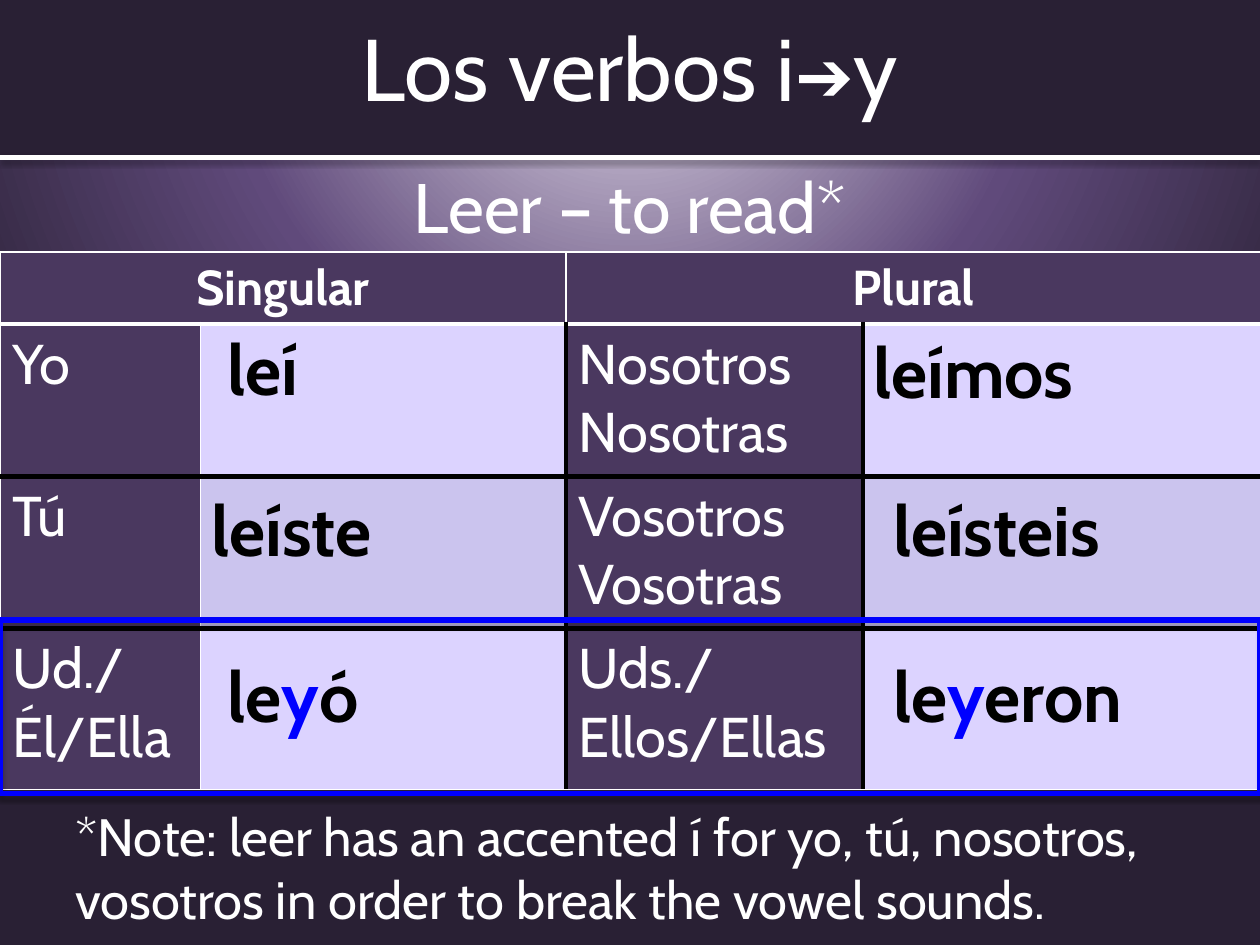
from dataclasses import dataclass
from pptx import Presentation
from pptx.dml.color import RGBColor as Rgb
from pptx.enum.shapes import MSO_CONNECTOR as Link, MSO_SHAPE as Geo
from pptx.enum.text import MSO_ANCHOR as Anchor, PP_ALIGN as Align
from pptx.oxml import parse_xml
from pptx.oxml.ns import nsdecls
from pptx.util import Cm, Pt

NS = nsdecls("a")
FONT = "Cabin"
WHITE, BLACK, BLUE = "FFFFFF", "000000", "0000FF"
DARK, PLUM, PALE, LILAC = "292034", "4A385F", "DCD3FF", "CBC4EE"
WIDE = 25.4


@dataclass
class Run:
    text: str
    color: str = ""
    size: int = 0
    font: str = ""


@dataclass
class Form:
    """A verb form laid over the grid."""
    left: float
    top: float
    width: float
    runs: list[Run]


@dataclass
class Person:
    """One row of the grid: pronouns and the shade of the form cells."""
    one: str
    many: str
    shade: str


FORMS = [
    Form(4.34, 6.48, 6.25, [Run("leí")]),
    Form(4.01, 9.73, 7.16, [Run("leíste")]),
    Form(4.34, 13.08, 6.86, [Run("le"), Run("y", BLUE), Run("ó")]),
    Form(17.35, 6.55, 8.53, [Run("leímos")]),
    Form(17.75, 9.73, 7.01, [Run("leísteis")]),
    Form(17.75, 13.08, 7.65, [Run("le"), Run("y", BLUE), Run("eron")]),
]
PEOPLE = [
    Person("Yo", "Nosotros\nNosotras", PALE),
    Person("Tú", "Vosotros\nVosotras", LILAC),
    Person("Ud./Él/Ella", "Uds./Ellos/Ellas", PALE),
]


def rgb(code: str) -> Rgb:
    return Rgb.from_string(code)


def style(para, size: int, color: str, bold: bool = False, align=Align.LEFT) -> None:
    font = para.font
    font.name, font.size, font.bold = FONT, Pt(size), bold
    font.color.rgb = rgb(color)
    para.alignment = align


def add_runs(para, runs: list[Run]) -> None:
    for item in runs:
        run = para.add_run()
        run.text = item.text
        if item.color:
            run.font.color.rgb = rgb(item.color)
        if item.size:
            run.font.size = Pt(item.size)
        if item.font:
            run.font.name = item.font


def add_text(slide, left: float, top: float, width: float, height: float,
             runs: list[Run], size: int, align=Align.LEFT, anchor=Anchor.TOP) -> None:
    box = slide.shapes.add_textbox(Cm(left), Cm(top), Cm(width), Cm(height))
    frame = box.text_frame
    frame.word_wrap = True
    frame.vertical_anchor = anchor
    add_runs(frame.paragraphs[0], runs)
    style(frame.paragraphs[0], size, WHITE, align=align)


def add_shade(shape, alpha: int, dist: float) -> None:
    shape._element.spPr.append(parse_xml(
        f'<a:effectLst {NS}><a:outerShdw blurRad="{Pt(3.1)}" dist="{Pt(dist)}" '
        f'dir="5400000" rotWithShape="0"><a:srgbClr val="{BLACK}">'
        f'<a:alpha val="{alpha * 1000}"/></a:srgbClr></a:outerShdw></a:effectLst>'))


def set_edges(cell, edges: dict[str, tuple[str, float]]) -> None:
    """Draw the named sides (L, R, T, B) and clear the others."""
    props = cell._tc.get_or_add_tcPr()
    for side in "LRTB":
        color, width = edges.get(side, ("", 0))
        ink = f'<a:solidFill><a:srgbClr val="{color}"/></a:solidFill>' if color else "<a:noFill/>"
        props.append(parse_xml(f'<a:ln{side} {NS} w="{Pt(width)}">{ink}</a:ln{side}>'))


def set_fill(cell, color: str) -> None:
    cell.fill.solid()
    cell.fill.fore_color.rgb = rgb(color)


def new_table(slide, left: float, top: float, cols: list[float], rows: list[float]):
    table = slide.shapes.add_table(len(rows), len(cols), Cm(left), Cm(top),
                                   Cm(sum(cols)), Cm(sum(rows))).table
    table.first_row = table.horz_banding = False
    for col, width in zip(table.columns, cols):
        col.width = Cm(width)
    for row, height in zip(table.rows, rows):
        row.height = Cm(height)
    return table


def add_grid(slide) -> None:
    table = new_table(slide, 0, 5.08, [4.04, 7.37, 5.99, 8.03], [1.45, 3.07, 3.07, 3.25])
    thin, thick, rule = (WHITE, 1), (WHITE, 3), (BLACK, 3)
    # Headings, each over two columns
    for col, word in ((0, "Singular"), (2, "Plural")):
        table.cell(0, col).merge(table.cell(0, col + 1))
        for part in (col, col + 1):
            cell = table.cell(0, part)
            set_edges(cell, {"L": thin, "R": thin, "T": thin, "B": thick})
            set_fill(cell, PLUM)
        head = table.cell(0, col)
        head.text = word
        style(head.text_frame.paragraphs[0], 28, WHITE, True, Align.CENTER)
    # Pronouns beside empty form cells
    sides = [(thin, thin), (thin, rule), (rule, rule), (rule, thin)]
    for row, who in enumerate(PEOPLE, 1):
        above = thick if row == 1 else rule
        below = thin if row == len(PEOPLE) else rule
        words = [who.one, "", who.many, ""]
        for col, (word, (left, right)) in enumerate(zip(words, sides)):
            cell = table.cell(row, col)
            set_edges(cell, {"L": left, "R": right, "T": above, "B": below})
            set_fill(cell, who.shade if col % 2 else PLUM)
            cell.text = word
            for para in cell.text_frame.paragraphs:
                style(para, 32, WHITE)


def add_form(slide, form: Form) -> None:
    cell = new_table(slide, form.left, form.top, [form.width], [1.96]).cell(0, 0)
    set_edges(cell, {})
    cell.fill.background()
    para = cell.text_frame.paragraphs[0]
    add_runs(para, form.runs)
    style(para, 40, BLACK, True)


def set_back(slide) -> None:
    fill = slide.background.fill
    fill.solid()
    stops = "".join(f'<a:gs pos="{pos * 1000}"><a:srgbClr val="{color}"/></a:gs>'
                    for pos, color in ((0, "E6E0EC"), (52, "604A7B"), (100, DARK)))
    props = slide._element.cSld.bg.bgPr
    props.replace(props[0], parse_xml(
        f'<a:gradFill {NS} rotWithShape="1"><a:gsLst>{stops}</a:gsLst><a:path path="circle">'
        '<a:fillToRect l="50000" t="-80000" r="50000" b="180000"/></a:path></a:gradFill>'))


def main() -> None:
    deck = Presentation()
    deck.slide_width, deck.slide_height = Cm(WIDE), Cm(19.05)
    slide = deck.slides.add_slide(deck.slide_layouts[6])
    shapes = slide.shapes
    set_back(slide)

    # Title band with its rule
    band = shapes.add_shape(Geo.RECTANGLE, 0, 0, Cm(WIDE), Cm(3.18))
    band.shadow.inherit = False
    band.fill.solid()
    band.fill.fore_color.rgb = rgb(DARK)
    band.line.fill.background()
    add_text(slide, 0, 3.18, WIDE, 13.21, [Run("Leer – to read*")], 40, Align.CENTER)
    line = shapes.add_connector(Link.STRAIGHT, 0, Cm(3.18), Cm(WIDE), Cm(3.18))
    line.line.color.rgb = rgb(WHITE)
    line.line.width = Pt(3)
    add_shade(line, 38, 1.6)
    title = [Run("Los verbos i"), Run("➔", size=40, font="Arial"), Run("y")]
    add_text(slide, 0, 0, WIDE, 2.69, title, 50, Align.CENTER, Anchor.MIDDLE)

    # Conjugation grid and verb forms
    add_grid(slide)
    for form in FORMS:
        add_form(slide, form)

    # Frame around the third person
    frame = shapes.add_shape(Geo.RECTANGLE, 0, Cm(12.5), Cm(WIDE), Cm(3.5))
    frame.fill.background()
    frame.line.color.rgb = rgb(BLUE)
    frame.line.width = Pt(3)
    add_shade(frame, 35, 1.8)

    # Footnote
    note = ("*Note: leer has an accented í for yo, tú, nosotros, "
            "vosotros in order to break the vowel sounds.")
    add_text(slide, 1.27, 16.08, 23.24, 2.82, [Run(note)], 30)
    deck.save("out.pptx")


if __name__ == "__main__":
    main()
